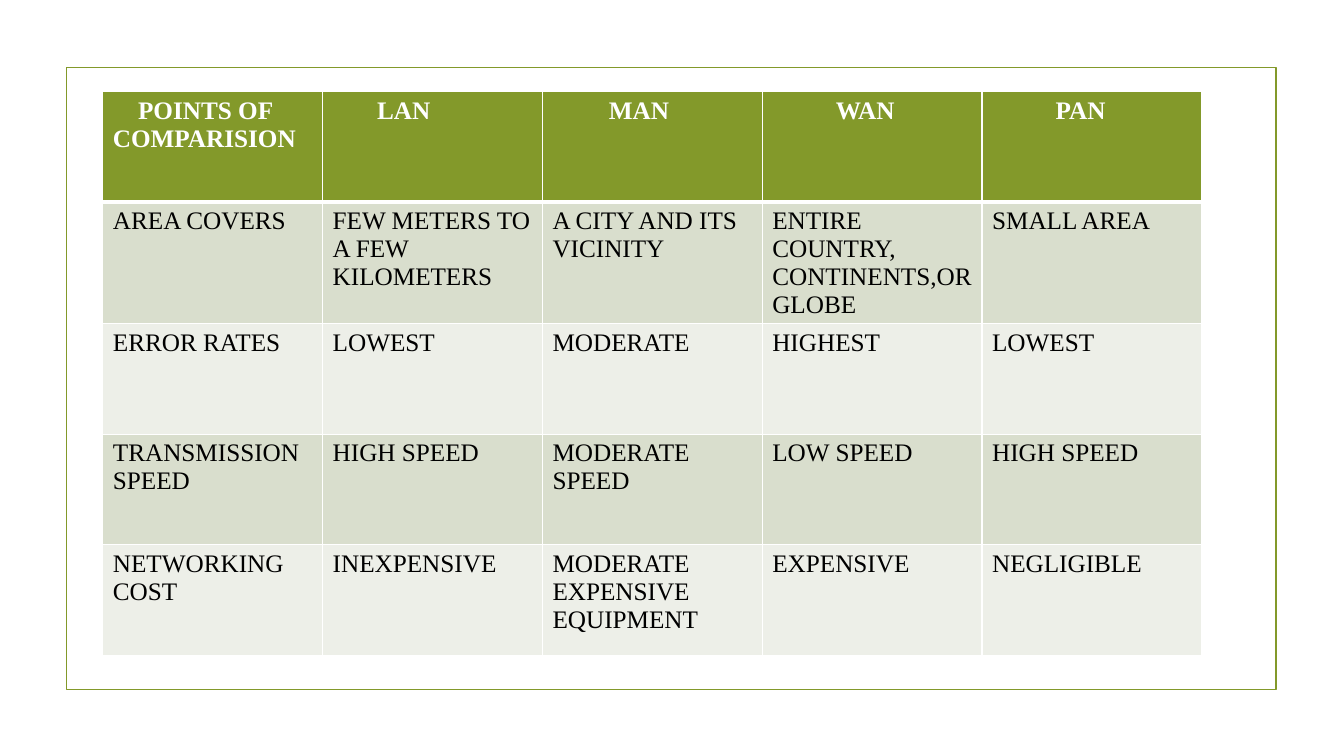
from dataclasses import dataclass

from lxml.etree import SubElement
from pptx import Presentation
from pptx.dml.color import RGBColor
from pptx.enum.shapes import MSO_SHAPE as Shape
from pptx.oxml.ns import qn
from pptx.util import Inches, Pt

HEADINGS = ["POINTS OF COMPARISION", "LAN", "MAN", "WAN", "PAN"]
HEADING_INDENTS = [0.25, 0.44, 0.56, 0.63, 0.63]
COMPARISONS = [
    ["AREA COVERS", "FEW METERS TO A FEW KILOMETERS", "A CITY AND ITS VICINITY",
     "ENTIRE COUNTRY, CONTINENTS,OR GLOBE", "SMALL AREA"],
    ["ERROR RATES", "LOWEST", "MODERATE", "HIGHEST", "LOWEST"],
    ["TRANSMISSION SPEED", "HIGH SPEED", "MODERATE SPEED", "LOW SPEED", "HIGH SPEED"],
    ["NETWORKING COST", "INEXPENSIVE", "MODERATE EXPENSIVE EQUIPMENT",
     "EXPENSIVE", "NEGLIGIBLE"],
]
FRAME_BOX = (0.66, 0.67, 12, 6.17)
TABLE_BOX = (1.02, 0.91, 10.9, 5.48)


@dataclass(frozen=True)
class Theme:
    font: str = "Times New Roman"
    size: int = 18
    green: str = "83992A"
    white: str = "FFFFFF"
    black: str = "000000"
    bands: tuple = ("D9DECD", "EDEFE8")
    frame_width: float = 1.25
    grid_width: float = 1
    header_rule_width: float = 3


THEME = Theme()


def color(value):
    return RGBColor.from_string(value)


def write_text(text_frame, text, *, text_color, bold=False, indent=0):
    """Fill the first paragraph; indent shifts its first line, in inches."""
    paragraph = text_frame.paragraphs[0]
    paragraph.add_run().text = text
    if indent:
        properties = paragraph._p.get_or_add_pPr()
        properties.set("marL", "0")
        properties.set("indent", str(Inches(indent)))
    font = paragraph.runs[0].font
    font.name = THEME.font
    font.size = Pt(THEME.size)
    font.bold = bold
    font.color.rgb = color(text_color)


def set_borders(cell, top, bottom):
    """Draw white borders; top and bottom are widths in points."""
    properties = cell._tc.get_or_add_tcPr()
    widths = {"L": THEME.grid_width, "R": THEME.grid_width, "T": top, "B": bottom}
    for side, width in widths.items():
        line = SubElement(properties, qn(f"a:ln{side}"), w=str(Pt(width)))
        fill = SubElement(line, qn("a:solidFill"))
        SubElement(fill, qn("a:srgbClr"), val=THEME.white)


def add_frame(slide):
    frame = slide.shapes.add_shape(Shape.RECTANGLE, *map(Inches, FRAME_BOX))
    frame.shadow.inherit = False
    frame.fill.background()
    frame.line.color.rgb = color(THEME.green)
    frame.line.width = Pt(THEME.frame_width)


def add_comparison_table(slide):
    rows = [HEADINGS, *COMPARISONS]
    table = slide.shapes.add_table(
        len(rows), len(HEADINGS), *map(Inches, TABLE_BOX)).table
    for row_index, row in enumerate(rows):
        is_header = row_index == 0
        fill = THEME.green if is_header else THEME.bands[(row_index - 1) % 2]
        top = THEME.header_rule_width if row_index == 1 else THEME.grid_width
        bottom = THEME.header_rule_width if is_header else THEME.grid_width
        for column_index, text in enumerate(row):
            cell = table.cell(row_index, column_index)
            set_borders(cell, top, bottom)
            cell.fill.solid()
            cell.fill.fore_color.rgb = color(fill)
            write_text(
                cell.text_frame, text, bold=is_header,
                text_color=THEME.white if is_header else THEME.black,
                indent=HEADING_INDENTS[column_index] if is_header else 0)


def main():
    presentation = Presentation()
    presentation.slide_width = Inches(13.33)
    presentation.slide_height = Inches(7.5)
    slide = presentation.slides.add_slide(presentation.slide_layouts[6])
    add_frame(slide)
    add_comparison_table(slide)
    presentation.save("out.pptx")


if __name__ == "__main__":
    main()
